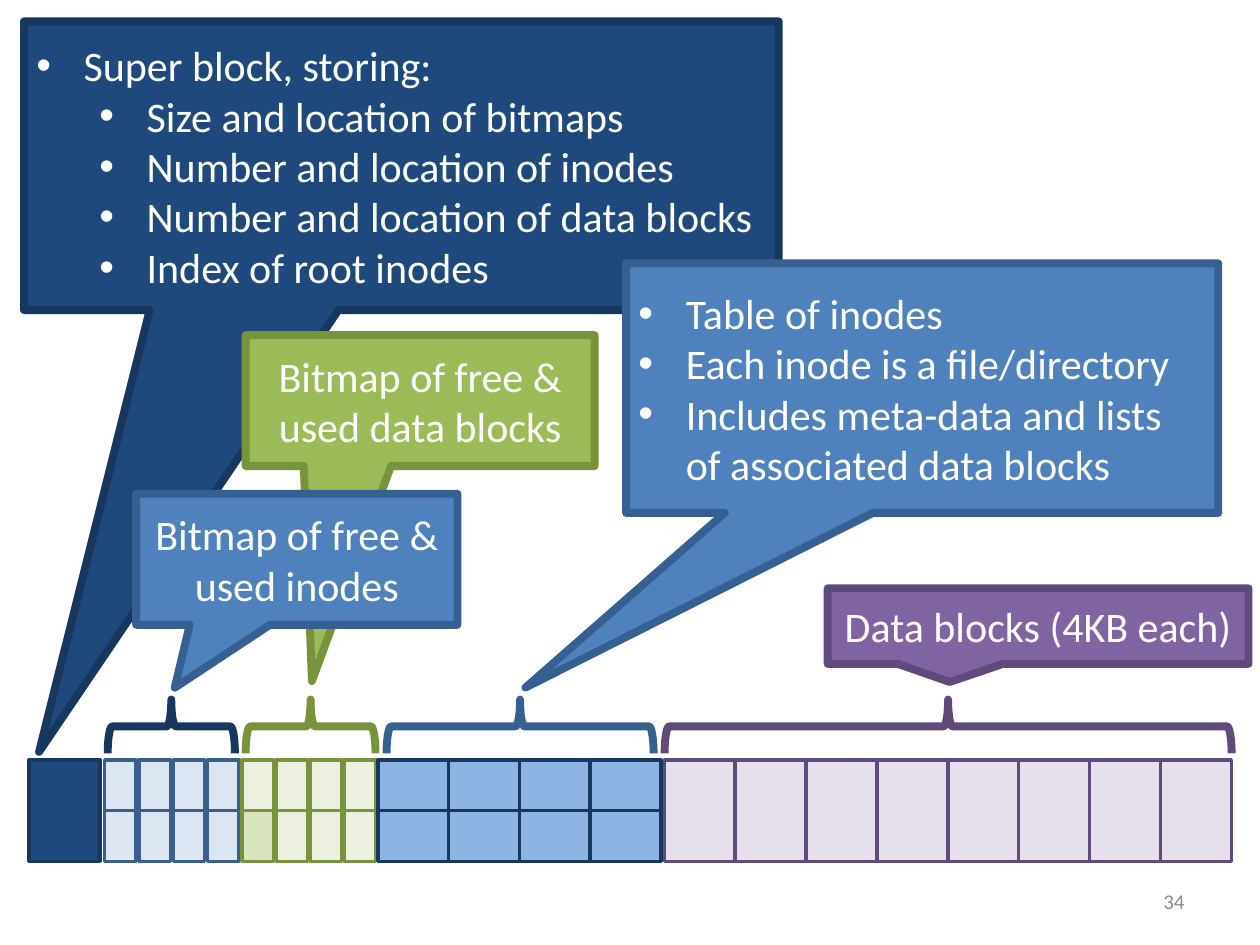
from dataclasses import dataclass

from lxml.etree import SubElement
from pptx import Presentation
from pptx.dml.color import RGBColor
from pptx.enum.shapes import MSO_SHAPE
from pptx.enum.text import MSO_ANCHOR, PP_ALIGN
from pptx.oxml.ns import qn
from pptx.util import Pt

WHITE = RGBColor(0xFF, 0xFF, 0xFF)
GRAY = RGBColor(0x8C, 0x8C, 0x8C)
NAVY = RGBColor(0x1F, 0x49, 0x7D)
DARK_NAVY = RGBColor(0x17, 0x37, 0x5E)
BLUE = RGBColor(0x4F, 0x81, 0xBD)
DARK_BLUE = RGBColor(0x37, 0x60, 0x92)
STEEL_BLUE = RGBColor(0x3A, 0x5F, 0x8C)
PALE_BLUE = RGBColor(0xDC, 0xE6, 0xF2)
SKY_BLUE = RGBColor(0x8E, 0xB4, 0xE3)
GREEN = RGBColor(0x9B, 0xBB, 0x59)
DARK_GREEN = RGBColor(0x77, 0x93, 0x3C)
PALE_GREEN = RGBColor(0xEB, 0xF1, 0xDE)
USED_GREEN = RGBColor(0xD7, 0xE4, 0xBD)
PURPLE = RGBColor(0x80, 0x64, 0xA2)
DARK_PURPLE = RGBColor(0x60, 0x4A, 0x7B)
PALE_PURPLE = RGBColor(0xE6, 0xE0, 0xEC)

FONT = "Calibri"
DISK_TOP, DISK_HEIGHT = 434.2, 58
CELL_LINE, CALLOUT_LINE = 2, 4.5
BRACE_MIDDLE, BRACE_DEPTH = 415.1, 30.8
BULLET_INDENT, LEVEL_INDENT = 27, 36


@dataclass(frozen=True)
class Region:
    """A run of equal cells on the disk strip."""
    left: float
    cell_width: float
    pitch: float
    columns: int
    rows: int
    fill: RGBColor
    line: RGBColor


@dataclass(frozen=True)
class Brace:
    center: float
    length: float
    line: RGBColor


@dataclass(frozen=True)
class Callout:
    box: tuple[float, float, float, float]
    tip: tuple[float, float]
    fill: RGBColor
    line: RGBColor
    lines: tuple[tuple[int, str], ...]
    bulleted: bool = False


REGIONS = (
    Region(59.8, 18, 19.6, 4, 2, PALE_BLUE, STEEL_BLUE),
    Region(138.2, 18, 19.5, 4, 2, PALE_GREEN, DARK_GREEN),
    Region(216, 40.5, 40.4, 4, 2, SKY_BLUE, DARK_NAVY),
    Region(379.6, 40.5, 40.5, 8, 1, PALE_PURPLE, DARK_PURPLE),
    Region(16.6, 40.5, 40.5, 1, 1, NAVY, DARK_NAVY),
)
USED_BITMAP_CELL = (REGIONS[1], 1, 0)

BRACES = (
    Brace(97.9, 72.7, DARK_NAVY),
    Brace(177.5, 74.2, DARK_GREEN),
    Brace(297.2, 152.6, DARK_BLUE),
    Brace(541.8, 324, DARK_PURPLE),
)

CALLOUTS = (
    Callout((13.7, 12.2, 431.3, 165), (-0.48, 2.03), NAVY, DARK_NAVY, (
        (0, "Super block, storing:"),
        (1, "Size and location of bitmaps"),
        (1, "Number and location of inodes"),
        (1, "Number and location of data blocks"),
        (1, "Index of root inodes"),
    ), bulleted=True),
    Callout((473, 336.2, 240.5, 43.2), (-0.21, 0.74), PURPLE, DARK_PURPLE,
            ((0, "Data blocks (4KB each)"),)),
    Callout((140.4, 191.5, 199.4, 74.9), (-0.31, 2.14), GREEN, DARK_GREEN,
            ((0, "Bitmap of free & used data blocks"),)),
    Callout((357.8, 150.5, 338.4, 142.6), (-0.67, 1.2), BLUE, DARK_BLUE, (
        (0, "Table of inodes"),
        (0, "Each inode is a file/directory"),
        (0, "Includes meta-data and lists of associated data blocks"),
    ), bulleted=True),
    Callout((77.8, 282.2, 183.6, 74.9), (-0.38, 0.98), BLUE, DARK_BLUE,
            ((0, "Bitmap of free & used inodes"),)),
)


def add_outlined(slide, kind, box, line, weight, fill=None):
    """Add a preset shape without shadow; no fill leaves it hollow."""
    shape = slide.shapes.add_shape(kind, *(Pt(length) for length in box))
    shape.shadow.inherit = False
    if fill is None:
        shape.fill.background()
    else:
        shape.fill.solid()
        shape.fill.fore_color.rgb = fill
    shape.line.color.rgb = line
    shape.line.width = Pt(weight)
    return shape


def add_bullet(paragraph, level: int) -> None:
    paragraph.level = level
    properties = paragraph._p.get_or_add_pPr()
    properties.set("marL", str(Pt(BULLET_INDENT + level * LEVEL_INDENT)))
    properties.set("indent", str(-Pt(BULLET_INDENT)))
    SubElement(properties, qn("a:buFont"), typeface="Arial")
    SubElement(properties, qn("a:buChar"), char="•")


def write_text(frame, lines, *, size: float, color: RGBColor,
               align: PP_ALIGN, bulleted: bool = False) -> None:
    """Fill a text frame with (level, text) paragraphs."""
    frame.word_wrap = True
    frame.vertical_anchor = MSO_ANCHOR.MIDDLE
    for index, (level, text) in enumerate(lines):
        paragraph = frame.add_paragraph() if index else frame.paragraphs[0]
        paragraph.alignment = align
        if bulleted:
            add_bullet(paragraph, level)
        run = paragraph.add_run()
        run.text = text
        run.font.name = FONT
        run.font.size = Pt(size)
        run.font.color.rgb = color


def draw_region(slide, region: Region) -> None:
    height = DISK_HEIGHT / region.rows
    for row in range(region.rows):
        for column in range(region.columns):
            used = (region, row, column) == USED_BITMAP_CELL
            box = (region.left + column * region.pitch,
                   DISK_TOP + row * height, region.cell_width, height)
            add_outlined(slide, MSO_SHAPE.RECTANGLE, box, region.line,
                         CELL_LINE, USED_GREEN if used else region.fill)


def draw_brace(slide, brace: Brace) -> None:
    """Turn a right brace so that it points up from the disk strip."""
    box = (brace.center - BRACE_DEPTH / 2, BRACE_MIDDLE - brace.length / 2,
           BRACE_DEPTH, brace.length)
    shape = add_outlined(slide, MSO_SHAPE.RIGHT_BRACE, box, brace.line,
                         CALLOUT_LINE)
    shape.rotation = 270


def draw_callout(slide, callout: Callout) -> None:
    shape = add_outlined(slide, MSO_SHAPE.RECTANGULAR_CALLOUT, callout.box,
                         callout.line, CALLOUT_LINE, callout.fill)
    shape.adjustments[0], shape.adjustments[1] = callout.tip
    write_text(shape.text_frame, callout.lines, size=24, color=WHITE,
               align=PP_ALIGN.LEFT if callout.bulleted else PP_ALIGN.CENTER,
               bulleted=callout.bulleted)


def main() -> None:
    presentation = Presentation()
    presentation.slide_width, presentation.slide_height = Pt(720), Pt(540)
    slide = presentation.slides.add_slide(presentation.slide_layouts[6])

    page_number = slide.shapes.add_textbox(Pt(516), Pt(500.5), Pt(168), Pt(28.8))
    write_text(page_number.text_frame, ((0, "34"),), size=12, color=GRAY,
               align=PP_ALIGN.RIGHT)
    for region in REGIONS:
        draw_region(slide, region)
    for brace in BRACES:
        draw_brace(slide, brace)
    for callout in CALLOUTS:
        draw_callout(slide, callout)

    presentation.save("out.pptx")


if __name__ == "__main__":
    main()
